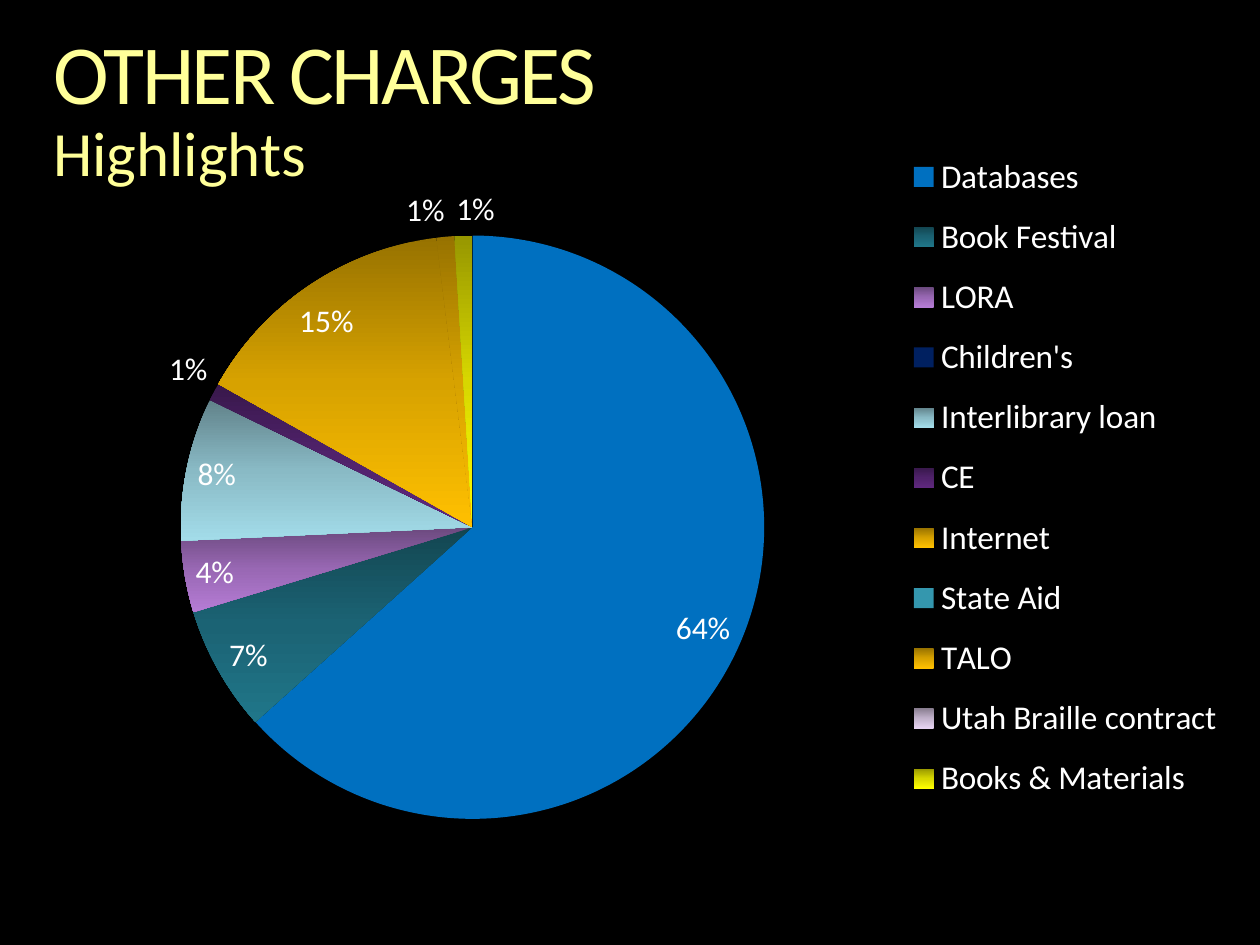
from lxml import etree
from pptx import Presentation
from pptx.chart.data import CategoryChartData
from pptx.dml.color import RGBColor
from pptx.enum.chart import XL_CHART_TYPE, XL_LABEL_POSITION, XL_LEGEND_POSITION
from pptx.enum.text import MSO_ANCHOR
from pptx.oxml import parse_xml
from pptx.oxml.ns import nsdecls, qn
from pptx.util import Cm, Pt

PIE = XL_CHART_TYPE.PIE
RIGHT = XL_LEGEND_POSITION.RIGHT
BEST = XL_LABEL_POSITION.BEST_FIT
TOP = MSO_ANCHOR.TOP
FACE = "Calibri"
WHITE, CREAM = "FFFFFF", "FFFF99"


def color(text):
    return RGBColor.from_string(text)


def place(part, index, **spots):
    """Give a chart part a fixed layout, in fractions of the chart."""
    for old in part.findall(qn("c:layout")):
        part.remove(old)
    layout = etree.Element(qn("c:layout"))
    manual = etree.SubElement(layout, qn("c:manualLayout"))
    for tag, val in spots.items():
        etree.SubElement(manual, qn("c:" + tag)).set("val", str(val))
    part.insert(index, layout)


# One colour is a plain fill, three run from top to bottom
SLICES = [
    ("Databases", 64, ["0070C0"]),
    ("Book Festival", 7, ["134651", "1B6374", "207689"]),
    ("LORA", 4, ["6B497E", "9968B4", "B57CD5"]),
    ("Children's", 0, ["002060"]),
    ("Interlibrary loan", 8, ["61828A", "89BAC5", "A3DCE9"]),
    ("CE", 1, ["38184B", "50226B", "5F287E"]),
    ("Internet", 15, ["977200", "D7A200", "FFC000"]),
    ("State Aid", 0, ["3497AE"]),
    ("TALO", 1, ["977200", "D7A200", "FFC000"]),
    ("Utah Braille contract", 0, ["887D8F", "C2B2CB", "E6D3F1"]),
    ("Books & Materials", 1, ["979700", "D7D700", "FFFF00"]),
]
names, values, fills = zip(*SLICES)

deck = Presentation()
deck.slide_width, deck.slide_height = Cm(25.4), Cm(19.05)
slide = deck.slides.add_slide(deck.slide_layouts[6])
back = slide.background.fill
back.solid()
back.fore_color.rgb = color("000000")

# Pie chart
data = CategoryChartData()
data.categories = names
data.add_series("Series 1", values)
chart = slide.shapes.add_chart(
    PIE, Cm(0.84), Cm(2.34), Cm(24.13), Cm(14.17), data).chart
chart.has_title = False
chart.has_legend = True
legend = chart.legend
legend.position = RIGHT
legend.include_in_layout = False
series = chart.plots[0].series[0]

for spot, hues in enumerate(fills):
    style = series.points[spot].format
    style.line.fill.background()
    if len(hues) == 1:
        style.fill.solid()
        style.fill.fore_color.rgb = color(hues[0])
        continue
    style.fill.gradient()
    style.fill.gradient_angle = 270
    stops = style.fill._fill._gradFill.find(qn("a:gsLst"))
    for old in list(stops):
        stops.remove(old)
    for pos, hue in zip((0, 50000, 100000), hues):
        stop = etree.SubElement(stops, qn("a:gs"), pos=str(pos))
        etree.SubElement(stop, qn("a:srgbClr"), val=hue)

labels = series.data_labels
formats = {
    "show_value": True,
    "show_percentage": False,
    "number_format": '0"%"',
    "number_format_is_linked": False,
    "position": BEST,
}
for key, val in formats.items():
    setattr(labels, key, val)
labels._element.insert(0, parse_xml(
    f'<c:dLbl {nsdecls("c")}><c:idx val="{names.index("State Aid")}"/>'
    '<c:delete val="1"/></c:dLbl>'))

for part, size in ((chart, 18), (labels, 18), (legend, 19)):
    for key, val in {"name": FACE, "size": Pt(size)}.items():
        setattr(part.font, key, val)
    part.font.color.rgb = color(WHITE)

place(chart._chartSpace.find(".//" + qn("c:plotArea")), 0,
      layoutTarget="inner", xMode="edge", yMode="edge",
      x=0.01, y=0.17, w=0.7, h=0.83)
place(legend._element, 1, xMode="edge", yMode="edge",
      x=0.72, y=0.03, w=0.27, h=0.97)

# Title
frame = slide.shapes.add_textbox(
    Cm(1.07), Cm(0.64), Cm(23.29), Cm(1.85)).text_frame
setup = {"word_wrap": True, "vertical_anchor": TOP, "margin_left": 0,
         "margin_top": 0, "margin_right": 0, "margin_bottom": 0}
for key, val in setup.items():
    setattr(frame, key, val)
para = frame.paragraphs[0]
para.line_spacing = 0.9
for text, size, gap in (("OTHER CHARGES", 48, -150), ("Highlights", 36, 0)):
    if para.runs:
        para.add_line_break()
    run = para.add_run()
    run.text = text
    for key, val in {"name": FACE, "size": Pt(size)}.items():
        setattr(run.font, key, val)
    run.font.color.rgb = color(CREAM)
    run._r.get_or_add_rPr().set("spc", str(gap))

deck.save("out.pptx")
